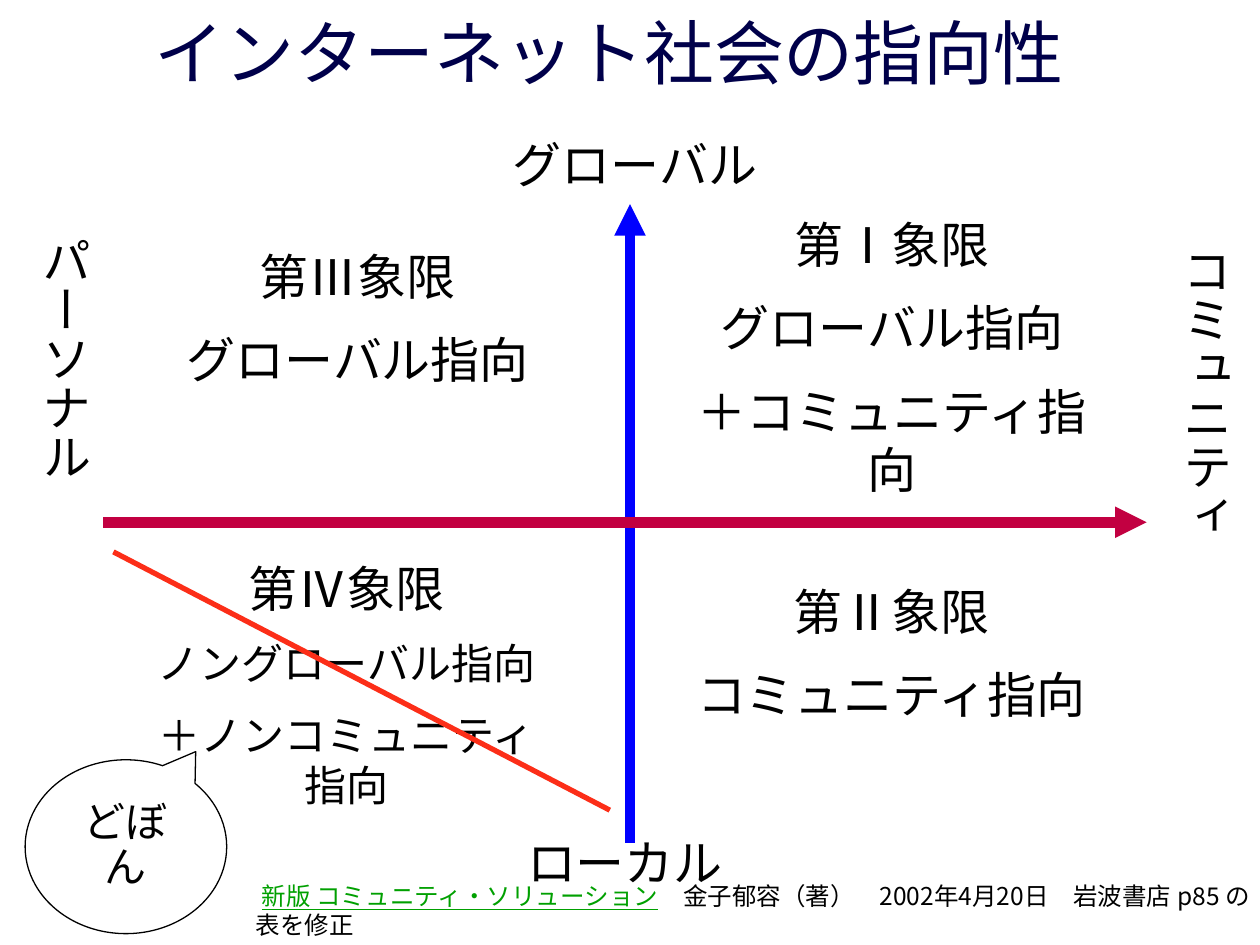
from lxml.etree import SubElement
from pptx import Presentation
from pptx.dml.color import RGBColor
from pptx.enum.shapes import MSO_CONNECTOR as CONN, MSO_SHAPE as SHAPE
from pptx.enum.text import MSO_ANCHOR as ANCHOR, MSO_AUTO_SIZE as FIT, PP_ALIGN as ALIGN
from pptx.oxml.ns import qn
from pptx.util import Inches, Pt

COLORS = {
    "text": "000000", "title": "00004A", "book": "00A000", "paper": "FFFFFF",
    "vertical": "0000FF", "horizontal": "C20041", "strike": "FC2E18",
}


def rgb(name):
    return RGBColor.from_string(COLORS[name])


class Board:
    """Slide on a grid of 100 columns and 75 rows."""
    font = "Noto Sans CJK JP"
    size = 28

    def __init__(self, prs):
        self.col, self.row = prs.slide_width / 100, prs.slide_height / 75
        self.s = prs.slides.add_slide(prs.slide_layouts[5])

    def place(self, x, y, w=0, h=0):
        return [round(v) for v in (x * self.col, y * self.row, w * self.col, h * self.row)]

    def style(self, p, size, color="text", align=ALIGN.CENTER):
        p.alignment = align
        p.font.size, p.font.name = Pt(size), self.font
        p.font.color.rgb = rgb(color)
        SubElement(p._p.pPr.find(qn("a:defRPr")), qn("a:ea"), typeface=self.font)

    def set_lines(self, tf, lines, spacing=None):
        for i, (text, size) in enumerate(lines):
            p = tf.add_paragraph() if i else tf.paragraphs[0]
            p.text = text
            if i:
                p.space_before = Pt(size / 2)
            if spacing:
                p.line_spacing = spacing
            self.style(p, size)

    def title(self, text, *box):
        sp = self.s.shapes.title
        sp.left, sp.top, sp.width, sp.height = self.place(*box)
        tf = sp.text_frame
        tf.text, tf.vertical_anchor, tf.auto_size = text, ANCHOR.MIDDLE, FIT.NONE
        tf.margin_left = tf.margin_right = Inches(0.09)
        tf.margin_top = tf.margin_bottom = Inches(0.04)
        self.style(tf.paragraphs[0], 40, "title")

    def shape(self, kind, *box):
        sp = self.s.shapes.add_shape(kind, *self.place(*box))
        sp.shadow.inherit = False
        sp.fill.background()
        sp.line.fill.background()
        sp.text_frame.vertical_anchor = ANCHOR.MIDDLE
        return sp

    def quadrant(self, lines, *box, wrap=True, raised=0):
        tf = self.shape(SHAPE.OVAL, *box).text_frame
        tf.word_wrap = wrap
        tf.margin_bottom = round((0.5 + raised) * self.row)
        self.set_lines(tf, lines)

    def callout(self, text, *box, tip):
        sp = self.shape(SHAPE.OVAL_CALLOUT, *box)
        sp.adjustments[0], sp.adjustments[1] = tip
        sp.fill.solid()
        sp.fill.fore_color.rgb = rgb("paper")
        sp.line.color.rgb, sp.line.width = rgb("text"), Pt(0.75)
        sp.text_frame.word_wrap = True
        self.set_lines(sp.text_frame, [(text, 24)], 0.9)

    def textbox(self, *box):
        tf = self.s.shapes.add_textbox(*self.place(*box)).text_frame
        tf.word_wrap, tf.auto_size = True, FIT.SHAPE_TO_FIT_TEXT
        return tf

    def label(self, text, *box, vertical=False):
        tf = self.textbox(*box)
        if vertical:
            tf._txBody.bodyPr.set("vert", "eaVert")
        self.set_lines(tf, [(text, self.size)], 0.9)

    def citation(self, parts, *box):
        tf = self.textbox(*box)
        tf.vertical_anchor = ANCHOR.MIDDLE
        p = tf.paragraphs[0]
        for text, color in parts:
            r = p.add_run()
            r.text = text
            r.font.color.rgb = rgb(color)
            r.font.underline = color == "book"
        self.style(p, 14, align=ALIGN.LEFT)
        p._p.pPr.set("indent", str(Inches(0.05)))

    def line(self, start, end, color, width, arrow=False):
        cx = self.s.shapes.add_connector(
            CONN.STRAIGHT, *self.place(*start)[:2], *self.place(*end)[:2])
        cx.line.color.rgb, cx.line.width = rgb(color), Pt(width)
        sp_pr = cx._element.spPr
        if arrow:
            SubElement(sp_pr.find(qn("a:ln")), qn("a:tailEnd"), type="triangle")
        SubElement(sp_pr, qn("a:effectLst"))


def main():
    prs = Presentation()
    prs.slide_width, prs.slide_height = Inches(10), Inches(7.5)
    b = Board(prs)
    b.title("インターネット社会の指向性", 2.7, -0.2, 91.3, 8.6)

    # Quadrants
    b.quadrant([("第Ⅰ象限", 28), ("グローバル指向", 28), ("＋コミュニティ指向", 28)],
               47.6, 16.8, 46.4, 23)
    b.quadrant([("第Ⅳ象限", 28), ("ノングローバル指向", 24), ("＋ノンコミュニティ指向", 24)],
               2.7, 42.8, 49.6, 23)
    b.quadrant([("第Ⅲ象限", 28), ("グローバル指向", 28)],
               10.8, 17, 35.2, 23, wrap=False, raised=6.6)
    b.quadrant([("第Ⅱ象限", 28), ("コミュニティ指向", 28)],
               53.1, 43.6, 35.3, 23, wrap=False, raised=6.6)

    # Axes and their end labels
    b.line((50, 66.9), (50, 16.2), "vertical", 6, arrow=True)
    b.line((8.2, 41.45), (91, 41.45), "horizontal", 6, arrow=True)
    b.label("グローバル", 25.6, 10.7, 49.6, 5.2)
    b.label("ローカル", 24.8, 66.1, 49.6, 5.2)
    b.label("パーソナル", 1.2, 17.8, 6.3, 45.4, vertical=True)
    b.label("コミュニティ", 91.7, 18.6, 6.3, 45.4, vertical=True)

    # Remark on the struck-out quadrant
    b.callout("どぼん", 2, 60.3, 16, 13.8, tip=(0.346, -0.547))
    b.line((9, 43.8), (48.4, 64.3), "strike", 3)

    # Source of the table
    b.citation([("新版 コミュニティ・ソリューション", "book"),
                ("　金子郁容（著）　2002年4月20日　岩波書店 p85 の表を修正", "text")],
               19.3, 70.6, 81.1, 3.3)
    prs.save("out.pptx")


if __name__ == "__main__":
    main()
